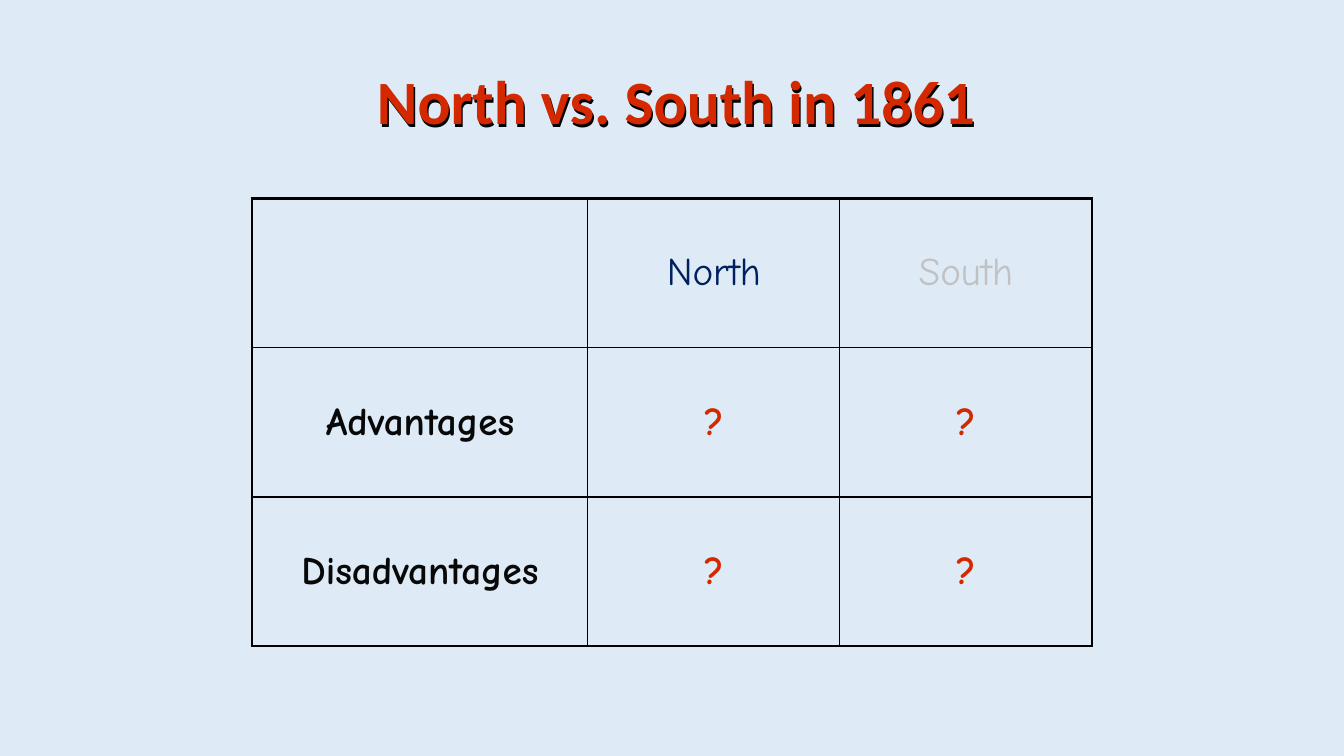
"""Build a slide that compares North and South in 1861 in a table."""
from lxml import etree
from pptx import Presentation
from pptx.dml.color import RGBColor
from pptx.enum.text import MSO_ANCHOR, MSO_AUTO_SIZE, PP_ALIGN
from pptx.oxml.ns import qn
from pptx.util import Inches, Pt

CENTER = PP_ALIGN.CENTER
MIDDLE = MSO_ANCHOR.MIDDLE
GROW = MSO_AUTO_SIZE.SHAPE_TO_FIT_TEXT
THEME = {
    "background": "DEEBF7", "red": "D42800", "navy": "002060",
    "gray": "C1C1C1", "ink": "080808", "line": "000000",
    "title_font": "Calibri", "table_font": "Comic Neue",
    "title_size": 44, "table_size": 28, "outer_line": 2.25, "inner_line": 1,
}


def write(frame, text, font, size, color, bold):
    """Put one centred, formatted line into a text frame."""
    para = frame.paragraphs[0]
    para.alignment = CENTER
    span = para.add_run()
    span.text = text
    look = {"name": font, "size": Pt(size), "bold": bold}
    for name, value in look.items():
        setattr(span.font, name, value)
    span.font.color.rgb = RGBColor.from_string(THEME[color])


def add_color(parent, color):
    """Append a solid colour to an XML element."""
    etree.SubElement(parent, qn("a:srgbClr"), val=THEME[color])


deck = Presentation()
deck.slide_width, deck.slide_height = Inches(13.33), Inches(7.5)
page = deck.slides.add_slide(deck.slide_layouts[6])
page.background.fill.solid()
page.background.fill.fore_color.rgb = RGBColor.from_string(THEME["background"])

title = page.shapes.add_textbox(Inches(2.25), Inches(0.58), Inches(8.92), Inches(0.83))
title.text_frame.word_wrap = True
title.text_frame.auto_size = GROW
write(title.text_frame, "North vs. South in 1861", THEME["title_font"],
      THEME["title_size"], "red", True)
effects = etree.SubElement(title.element.spPr, qn("a:effectLst"))
shadow = etree.SubElement(effects, qn("a:outerShdw"), dist=str(Pt(2.25)),
                          dir=str(63 * 60000), algn="ctr", rotWithShape="0")
add_color(shadow, "line")

ROWS = [
    [None, ("North", "navy", False), ("South", "gray", False)],
    [("Advantages", "ink", True), ("?", "red", True), ("?", "red", True)],
    [("Disadvantages", "ink", True), ("?", "red", True), ("?", "red", True)],
]
COLUMN_WIDTHS = [3.33, 2.5, 2.5]
ROW_HEIGHT = 1.48
last = len(ROWS) - 1
frame = page.shapes.add_table(
    len(ROWS), len(COLUMN_WIDTHS), Inches(2.5), Inches(1.97),
    Inches(sum(COLUMN_WIDTHS)), Inches(ROW_HEIGHT * len(ROWS)))
table = frame.table
table.first_row = table.horz_banding = False
for column, width in zip(table.columns, COLUMN_WIDTHS):
    column.width = Inches(width)

for row_index, entries in enumerate(ROWS):
    table.rows[row_index].height = Inches(ROW_HEIGHT)
    for column_index, entry in enumerate(entries):
        cell = table.cell(row_index, column_index)
        cell.vertical_anchor = MIDDLE
        if entry:
            text, color, bold = entry
            write(cell.text_frame, text, THEME["table_font"],
                  THEME["table_size"], color, bold)
        outer_sides = {
            "a:lnL": column_index == 0, "a:lnR": column_index == last,
            "a:lnT": row_index == 0, "a:lnB": row_index == last,
        }
        properties = cell._tc.get_or_add_tcPr()
        for side, outer in outer_sides.items():
            weight = THEME["outer_line" if outer else "inner_line"]
            line = etree.SubElement(properties, qn(side), w=str(Pt(weight)))
            add_color(etree.SubElement(line, qn("a:solidFill")), "line")
        cell.fill.background()

deck.save("out.pptx")
